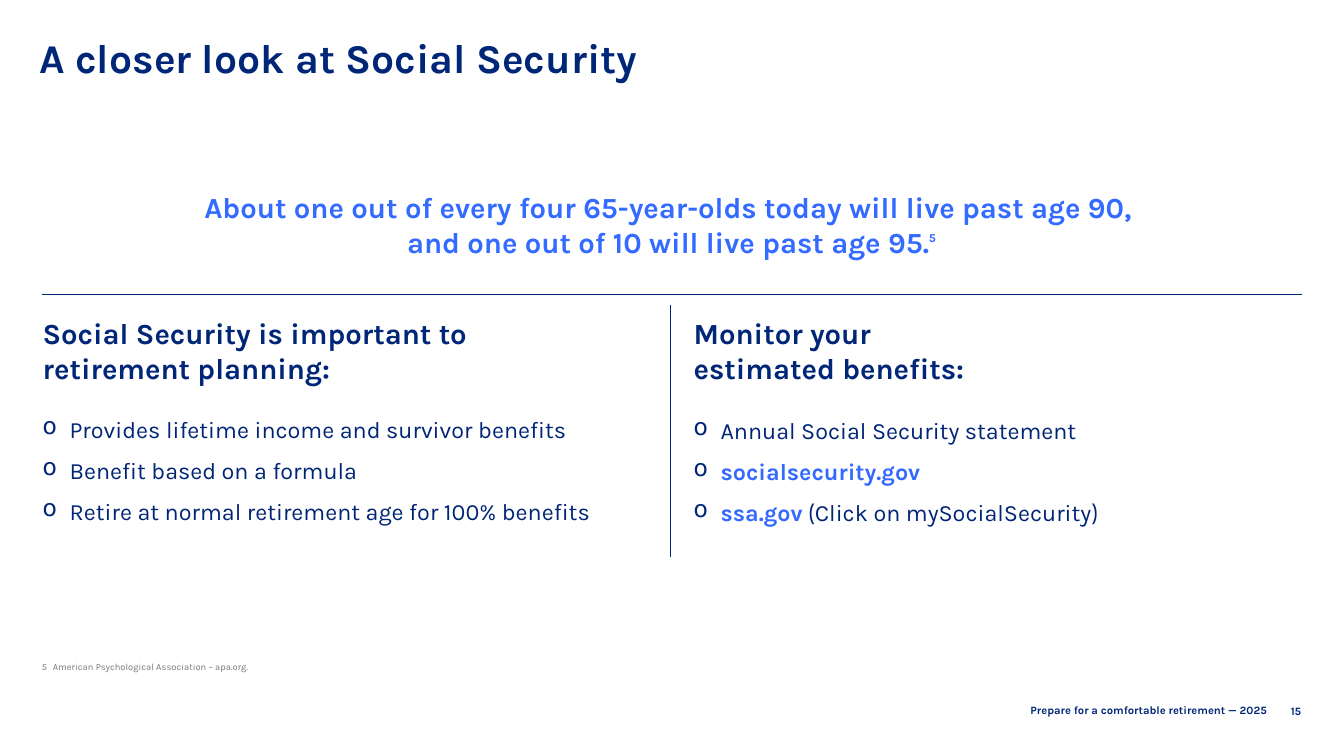
from lxml.etree import SubElement
from pptx import Presentation
from pptx.dml.color import RGBColor
from pptx.enum.shapes import MSO_CONNECTOR
from pptx.enum.text import MSO_ANCHOR, MSO_AUTO_SIZE, PP_ALIGN
from pptx.oxml.ns import qn
from pptx.util import Inches, Pt

COLORS = {"navy": "002677", "ink": "002577", "blue": "336AFF",
          "link": "3369FF", "gray": "75787B"}
COLUMNS, ROWS = 16, 9


class Slide:
    """Holds the page, its grid and its text style."""

    def __init__(self, deck):
        self.page = deck.slides.add_slide(deck.slide_layouts[5])
        self.column = deck.slide_width / COLUMNS
        self.row = deck.slide_height / ROWS

    def at(self, left, top, *size):
        scale = (self.column, self.row) * 2
        return [round(n * unit) for n, unit in zip((left, top, *size), scale)]

    def style(self, font, size=None, color=None, bold=None, face=None):
        if size:
            font.size = Pt(size)
        if color:
            font.color.rgb = RGBColor.from_string(COLORS[color])
        if bold is not None:
            font.bold = bold
        if face:
            font.name = face

    def frame(self, box, anchor=MSO_ANCHOR.TOP):
        frame = box.text_frame
        frame.word_wrap = True
        frame.auto_size = MSO_AUTO_SIZE.NONE
        frame.vertical_anchor = anchor
        return frame

    def title(self, text, place):
        box = self.page.shapes.title
        box.left, box.top, box.width, box.height = self.at(*place)
        self.para(self.frame(box), text, 35, "navy", True, leading=30)

    def text(self, place, text, size, color, bold=False, anchor=MSO_ANCHOR.TOP, **layout):
        frame = self.frame(self.page.shapes.add_textbox(*self.at(*place)), anchor)
        self.para(frame, text, size, color, bold, **layout)
        return frame

    def para(self, frame, text, size, color, bold=False, align=PP_ALIGN.LEFT,
             leading=None, before=None, hang=0, bullet=None):
        """Text is a string, or a list of strings and (string, style) pairs."""
        para = frame.paragraphs[0]
        if para.runs:
            para = frame.add_paragraph()
        para.alignment = align
        if leading:
            para.line_spacing = Pt(leading)
        if before:
            para.space_before = Pt(before)
        props = para._p.get_or_add_pPr()
        if hang:
            props.set("marL", str(Inches(hang)))
            props.set("indent", str(-Inches(hang)))
        if bullet:
            tint = SubElement(props, qn("a:buClr"))
            SubElement(tint, qn("a:srgbClr"), val=COLORS[color])
            SubElement(props, qn("a:buChar"), char=bullet)
        self.style(para.font, size, color, bold, "Karla")
        for part in [text] if isinstance(text, str) else text:
            words, look = (part, {}) if isinstance(part, str) else part
            self.spans(para, words, **look)

    def spans(self, para, words, raised=None, **look):
        for index, line in enumerate(words.split("\n")):
            if index:
                para.add_line_break()
            span = para.add_run()
            span.text = line
            self.style(span.font, **look)
            if raised:
                span._r.get_or_add_rPr().set("baseline", str(raised * 1000))

    def topic(self, place, heading, items, first_leading):
        frame = self.text(place, heading, 25, "navy", True)
        for index, item in enumerate(items):
            self.para(frame, item, 20, "ink", hang=0.32, bullet="o",
                      leading=23 if index else first_leading,
                      before=12 if index else 27)

    def rule(self, start, end, color):
        line = self.page.shapes.add_connector(
            MSO_CONNECTOR.STRAIGHT, *self.at(*start), *self.at(*end))
        line.line.color.rgb = RGBColor.from_string(COLORS[color])
        line.line.width = Pt(0.5)
        SubElement(line._element.spPr, qn("a:effectLst"))


def main():
    deck = Presentation()
    deck.slide_width, deck.slide_height = Inches(16), Inches(9)
    slide = Slide(deck)

    # Title and key statistic
    slide.title("A closer look at Social Security", (0.37, 0.5, 11, 1.08))
    slide.text((0.48, 2.2, 15.03, 1.09),
               ["About one out of every four 65-year-olds today will live past age 90, \n"
                "and one out of 10 will live past age 95.",
                ("5", {"size": 18, "raised": 50})],
               25, "blue", True, align=PP_ALIGN.CENTER)

    # Dividers
    slide.rule((0.5, 3.5), (15.5, 3.5), "ink")
    slide.rule((7.98, 3.63), (7.98, 6.63), "navy")

    # Two topics
    slide.topic((0.41, 3.7, 7.39, 2.8),
                "Social Security is important to \nretirement planning:",
                ["Provides lifetime income and survivor benefits",
                 "Benefit based on a formula",
                 "Retire at normal retirement age for 100% benefits"], 23)
    link = {"color": "link", "bold": True}
    bracket = {"face": "Cabin"}
    slide.topic((8.16, 3.7, 6.43, 2.96),
                "Monitor your \nestimated benefits:",
                ["Annual Social Security statement",
                 [("socialsecurity.gov", link)],
                 [("ssa.gov ", link), ("(", bracket),
                  "Click on mySocialSecurity", (")", bracket)]], None)

    # Footnote and footer
    note = slide.text((0.4, 7.77, 6.09, 0.23),
                      "5 \tAmerican Psychological Association – apa.org.",
                      8, "gray", anchor=MSO_ANCHOR.BOTTOM, leading=10, hang=0.13)
    note.margin_bottom = 0
    slide.text((9.78, 8.33, 5.4, 0.24), "Prepare for a comfortable retirement — 2025",
               9.6, "navy", True, anchor=MSO_ANCHOR.MIDDLE, align=PP_ALIGN.RIGHT)
    slide.text((15.19, 8.33, 0.4, 0.19), "15", 9.6, "navy", True, align=PP_ALIGN.RIGHT)

    deck.save("out.pptx")


if __name__ == "__main__":
    main()
